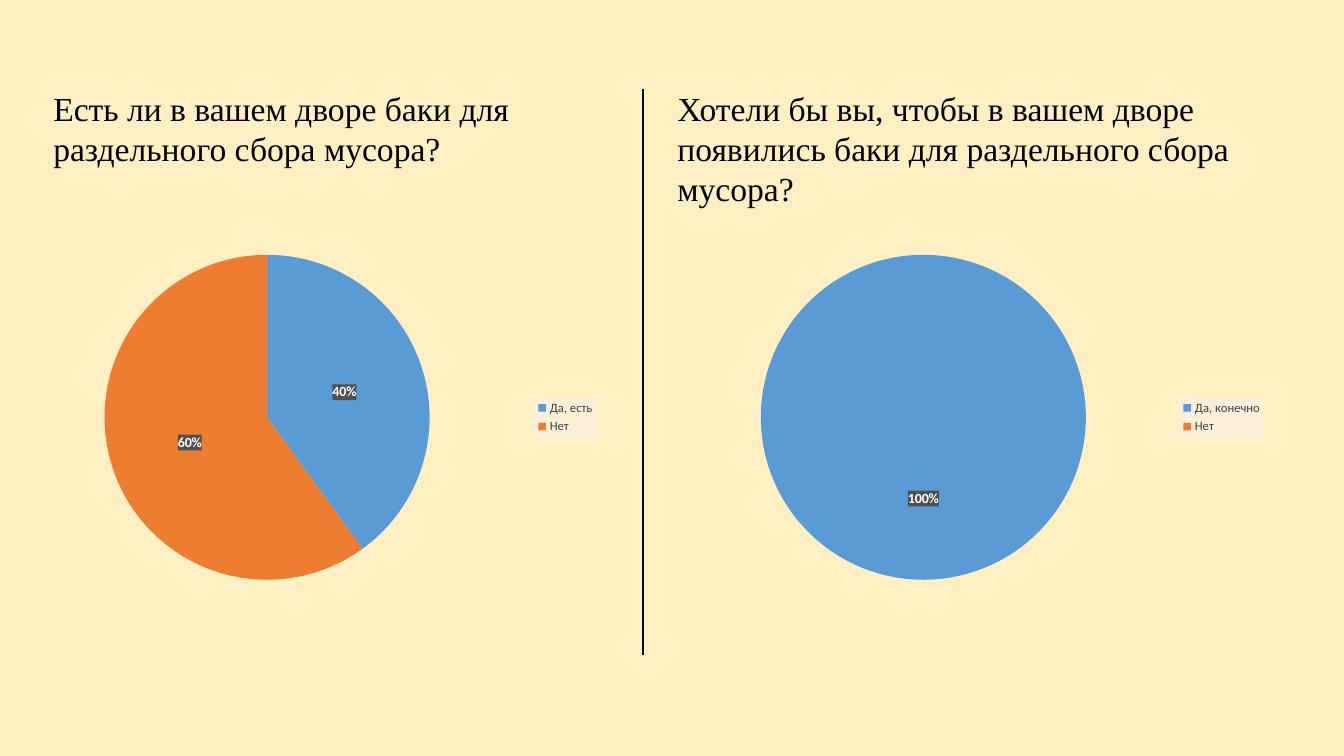
from dataclasses import dataclass

from lxml import etree
from pptx import Presentation
from pptx.chart.data import CategoryChartData
from pptx.dml.color import RGBColor
from pptx.enum.chart import XL_CHART_TYPE as ChartType
from pptx.enum.chart import XL_LABEL_POSITION as LabelPos
from pptx.enum.chart import XL_LEGEND_POSITION as LegendPos
from pptx.enum.shapes import MSO_CONNECTOR as Connector
from pptx.oxml import parse_xml
from pptx.oxml.ns import nsdecls, qn
from pptx.util import Inches, Pt


@dataclass(frozen=True)
class Theme:
    background: str = "FFF0C4"
    ink: str = "000000"
    slices: tuple = ("5B9BD5", "ED7D31")
    label_text: str = "FFFFFF"
    label_fill: str = "505050"
    legend_text: str = "404040"
    legend_fill: str = "FAF0D7"
    question_font: str = "Times New Roman"
    chart_font: str = "Calibri"
    question_size: int = 24
    label_size: int = 10
    legend_size: int = 9
    divider_width: float = 1.5


THEME = Theme()


def style_font(font, name, size, color, bold=False):
    font.name = name
    font.size = Pt(size)
    font.bold = bold
    font.color.rgb = RGBColor.from_string(color)


def fill_behind_text(element, color):
    element.find(qn("c:txPr")).addprevious(parse_xml(
        f'<c:spPr {nsdecls("c", "a")}><a:solidFill>'
        f'<a:srgbClr val="{color}"/></a:solidFill></c:spPr>'))


def hide_label(labels, index):
    labels._element.insert(0, parse_xml(
        f'<c:dLbl {nsdecls("c")}><c:idx val="{index}"/>'
        '<c:delete val="1"/></c:dLbl>'))


def add_question(slide, text, left, width, height):
    tf = slide.shapes.add_textbox(
        Inches(left), Inches(0.82), Inches(width), Inches(height)).text_frame
    tf.word_wrap = True
    p = tf.paragraphs[0]
    p.text = text
    style_font(p.font, THEME.question_font, THEME.question_size, THEME.ink)


def add_divider(slide):
    x = Inches(6.38)
    line = slide.shapes.add_connector(
        Connector.STRAIGHT, x, Inches(0.88), x, Inches(6.5))
    line.line.color.rgb = RGBColor.from_string(THEME.ink)
    line.line.width = Pt(THEME.divider_width)
    etree.SubElement(line._element.spPr, qn("a:effectLst"))


def add_pie(slide, answers, left):
    data = CategoryChartData()
    data.categories = list(answers)
    data.add_series("Series 1", list(answers.values()))
    chart = slide.shapes.add_chart(
        ChartType.PIE, Inches(left), Inches(2.39), Inches(6), Inches(3.5),
        data).chart
    chart.has_title = False
    style_font(chart.font, THEME.chart_font, THEME.label_size, THEME.ink)

    chart.has_legend = True
    legend = chart.legend
    legend.position = LegendPos.RIGHT
    legend.include_in_layout = False
    style_font(legend.font, THEME.chart_font, THEME.legend_size,
               THEME.legend_text)
    fill_behind_text(legend._element, THEME.legend_fill)

    plot = chart.plots[0]
    plot.vary_by_categories = True
    series = plot.series[0]
    labels = series.data_labels
    labels.show_percentage = True
    labels.show_value = False
    labels.number_format = "0%"
    labels.number_format_is_linked = False
    labels.position = LabelPos.CENTER
    style_font(labels.font, THEME.chart_font, THEME.label_size,
               THEME.label_text, bold=True)
    fill_behind_text(labels._element, THEME.label_fill)

    for i, (value, color) in enumerate(zip(answers.values(), THEME.slices)):
        fill = series.points[i].format.fill
        fill.solid()
        fill.fore_color.rgb = RGBColor.from_string(color)
        if value == 0:
            hide_label(labels, i)


def main():
    prs = Presentation()
    prs.slide_width, prs.slide_height = Inches(13.33), Inches(7.5)
    slide = prs.slides.add_slide(prs.slide_layouts[6])
    background = slide.background.fill
    background.solid()
    background.fore_color.rgb = RGBColor.from_string(THEME.background)

    add_question(slide, "Есть ли в вашем дворе баки для раздельного сбора мусора?",
                 0.43, 5.05, 0.91)
    add_pie(slide, {"Да, есть": 40, "Нет": 60}, 0)
    add_divider(slide)
    add_question(slide, "Хотели бы вы, чтобы в вашем дворе появились баки для "
                 "раздельного сбора мусора?", 6.62, 6.51, 1.31)
    add_pie(slide, {"Да, конечно": 100, "Нет": 0}, 6.62)

    prs.save("out.pptx")


if __name__ == "__main__":
    main()
